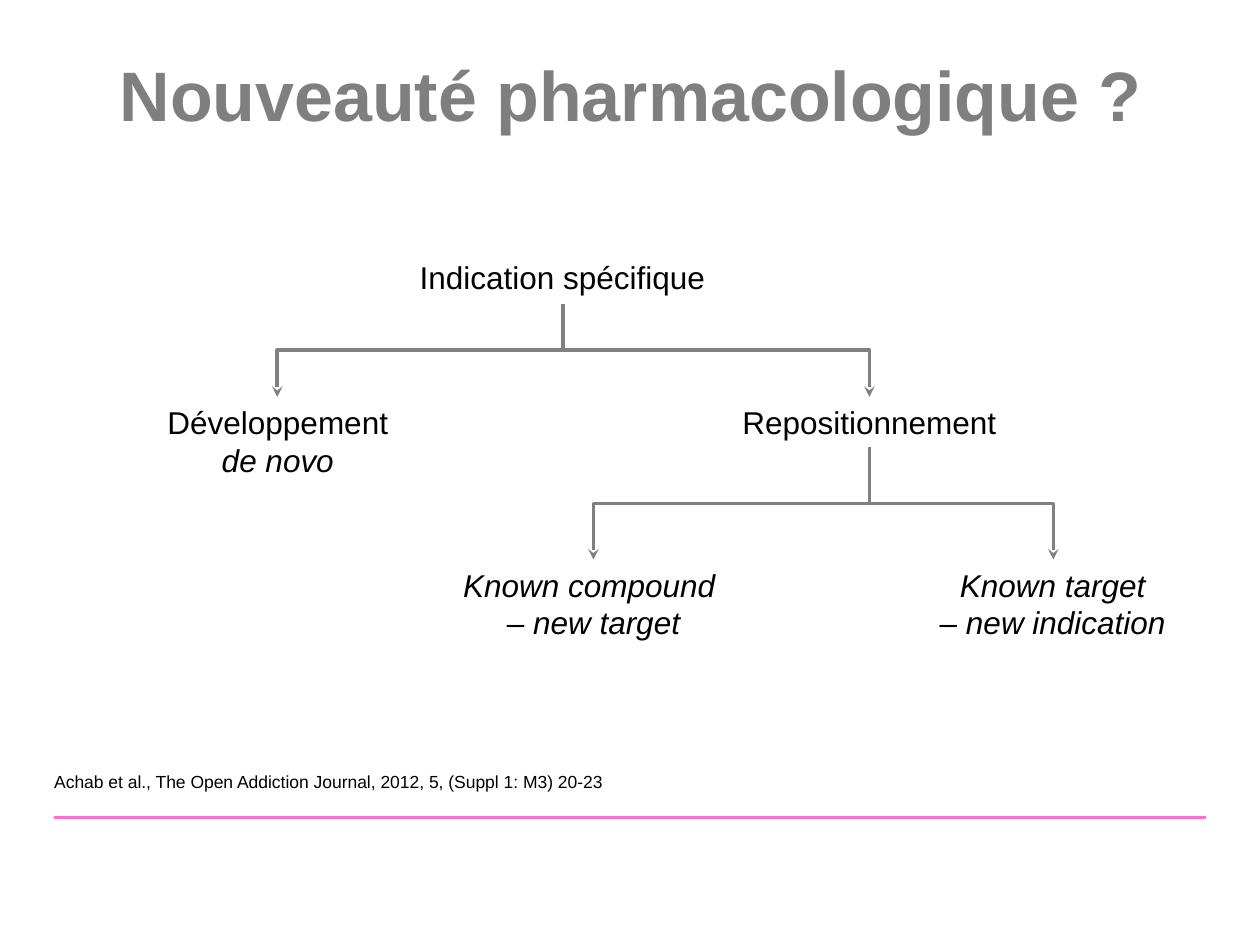
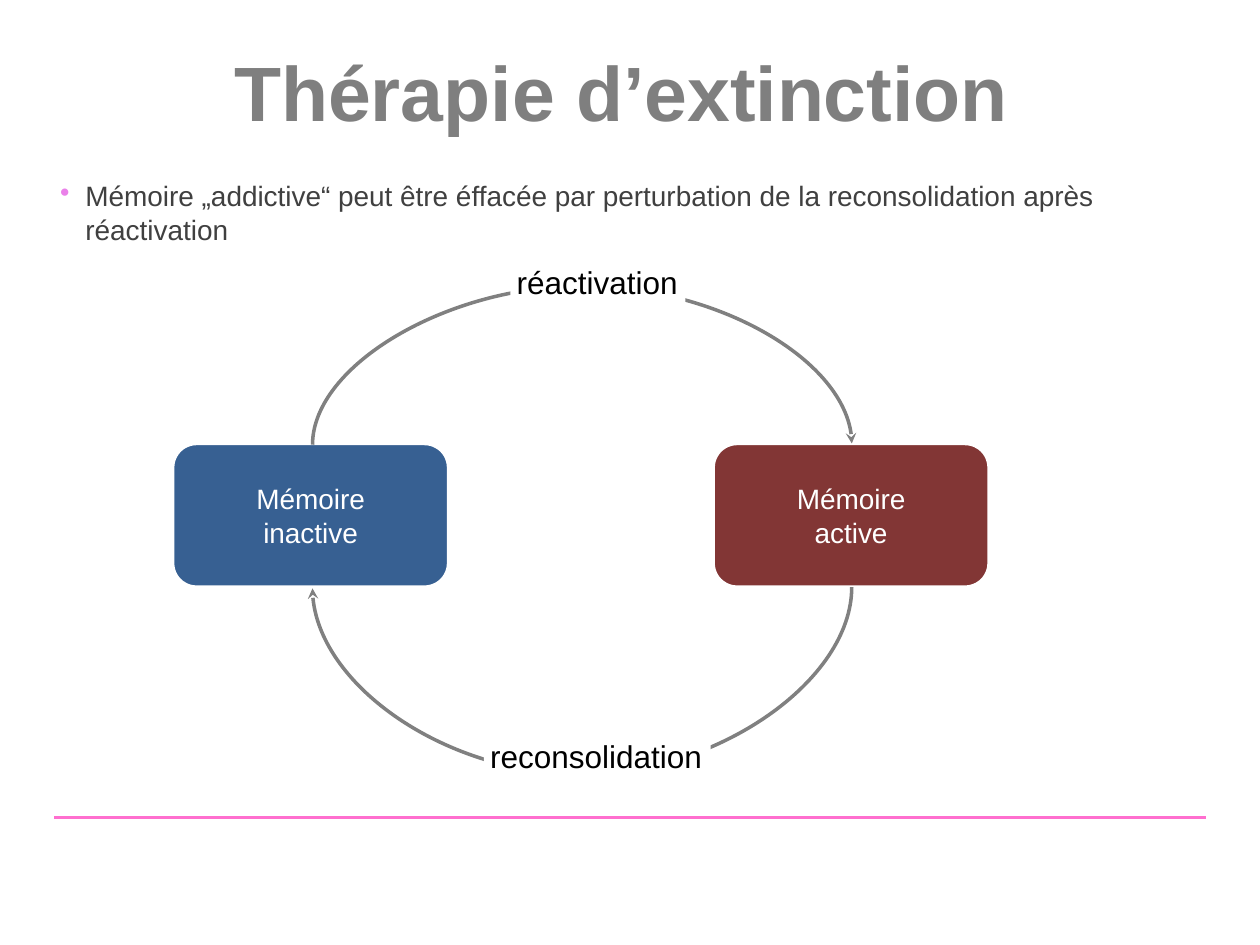
from pptx import Presentation
from pptx.dml.color import RGBColor
from pptx.enum.shapes import MSO_CONNECTOR, MSO_SHAPE
from pptx.enum.text import MSO_ANCHOR, PP_ALIGN
from pptx.oxml.ns import qn
from pptx.oxml.xmlchemy import OxmlElement
from pptx.util import Inches, Pt

FONT = "Arial"
TITLE_GREY = "7F7F7F"
ARROW_GREY = "808080"
BODY_GREY = "404040"
BLACK = "000000"
WHITE = "FFFFFF"
RULE_PINK = "FF6FCF"
BULLET_PINK = "EA81E9"
INACTIVE_BLUE = "376092"
ACTIVE_RED = "823635"


def rgb(hex_colour):
    return RGBColor.from_string(hex_colour)


def add_child(parent, tag, **attributes):
    child = OxmlElement(tag)
    for name, value in attributes.items():
        child.set(name, value)
    parent.append(child)
    return child


def write(frame, lines, size, colour, align=PP_ALIGN.CENTER, bold=False,
          italic_lines=(), inset=0.05):
    """Fill a text frame with one paragraph per line."""
    frame.margin_left = frame.margin_right = Inches(inset)
    frame.margin_top = frame.margin_bottom = Inches(0.05)
    for index, line in enumerate(lines):
        paragraph = frame.add_paragraph() if index else frame.paragraphs[0]
        paragraph.text = line
        paragraph.alignment = align
        font = paragraph.font
        font.name, font.size, font.bold = FONT, Pt(size), bold
        font.italic = index in italic_lines
        font.color.rgb = rgb(colour)


def add_title(slide, text, box, size):
    title = slide.shapes.add_textbox(*map(Inches, box))
    title.text_frame.word_wrap = True
    title.text_frame.vertical_anchor = MSO_ANCHOR.MIDDLE
    write(title.text_frame, [text], size, TITLE_GREY, bold=True, inset=0.1)


def add_label(slide, lines, box, size=18, align=PP_ALIGN.CENTER,
              italic_lines=(), fill=None):
    label = slide.shapes.add_textbox(*map(Inches, box))
    label.text_frame.word_wrap = False
    if fill:
        label.fill.solid()
        label.fill.fore_color.rgb = rgb(fill)
    write(label.text_frame, lines, size, BLACK, align, italic_lines=italic_lines)


def add_bullet(slide, text, box):
    body = slide.shapes.add_textbox(*map(Inches, box))
    body.text_frame.word_wrap = True
    properties = body.text_frame.paragraphs[0]._p.get_or_add_pPr()
    properties.set("marL", str(Inches(0.2)))
    properties.set("indent", str(Inches(-0.2)))
    add_child(add_child(properties, "a:buClr"), "a:srgbClr", val=BULLET_PINK)
    add_child(properties, "a:buChar", char="•")
    write(body.text_frame, [text], 16, BODY_GREY, PP_ALIGN.LEFT, inset=0.1)


def add_memory_state(slide, state, left, colour):
    box = slide.shapes.add_shape(MSO_SHAPE.ROUNDED_RECTANGLE, Inches(left),
                                 Inches(3.52), Inches(2.19), Inches(1.14))
    box.shadow.inherit = False
    box.fill.solid()
    box.fill.fore_color.rgb = rgb(colour)
    box.line.color.rgb = rgb(WHITE)
    box.line.width = Pt(2)
    box.text_frame.vertical_anchor = MSO_ANCHOR.MIDDLE
    write(box.text_frame, ["Mémoire", state], 16, WHITE)


def add_line(slide, kind, start, end, colour):
    line = slide.shapes.add_connector(kind, *map(Inches, (*start, *end)))
    line.line.color.rgb = rgb(colour)
    line.line.width = Pt(2)
    add_child(line._element.spPr, "a:effectLst")
    return line


def add_arrow(slide, kind, start, end, bend_y):
    """Join two points by an arrow that leaves vertically and crosses at bend_y.

    Connectors leave sideways, so the ends are laid out a quarter turn back
    around the middle and the whole connector is then rotated.
    """
    (x1, y1), (x2, y2) = start, end
    middle_x, middle_y = (x1 + x2) / 2, (y1 + y2) / 2
    turn = -1 if x2 > x1 and y2 > y1 else 1

    def turned_back(x, y):
        return middle_x + turn * (y - middle_y), middle_y - turn * (x - middle_x)

    arrow = add_line(slide, kind, turned_back(*start), turned_back(*end), ARROW_GREY)
    properties = arrow._element.spPr
    degrees = 90 if turn > 0 else 270
    properties.find(qn("a:xfrm")).set("rot", str(degrees * 60000))
    geometry = properties.find(qn("a:prstGeom"))
    for old_guides in geometry.findall(qn("a:avLst")):
        geometry.remove(old_guides)
    bend = round((bend_y - y1) / (y2 - y1) * 100000)
    add_child(add_child(geometry, "a:avLst"), "a:gd", name="adj1", fmla=f"val {bend}")
    add_child(properties.find(qn("a:ln")), "a:tailEnd", type="stealth")


def add_fork(slide, stem, branch_xs, branch_y):
    """Draw elbow arrows from one stem down to several branches."""
    for x in branch_xs:
        add_arrow(slide, MSO_CONNECTOR.ELBOW, stem, (x, branch_y),
                  (stem[1] + branch_y) / 2)


def add_ruled_slide(deck):
    slide = deck.slides.add_slide(deck.slide_layouts[6])
    add_line(slide, MSO_CONNECTOR.STRAIGHT, (0.43, 6.49), (9.57, 6.49), RULE_PINK)
    return slide


def build_indication_tree(deck):
    slide = add_ruled_slide(deck)
    add_title(slide, "Nouveauté pharmacologique ?", (0.49, 0.36, 9.03, 0.77), 40)
    add_label(slide, ["Indication spécifique"], (3.28, 2, 2.39, 0.4),
              align=PP_ALIGN.LEFT)
    add_label(slide, ["Développement", "de novo"], (1.27, 3.15, 1.87, 0.71),
              italic_lines=(1,))
    add_label(slide, ["Repositionnement"], (5.81, 3.15, 2.18, 0.4))
    add_label(slide, ["Known compound ", "– new target"], (3.62, 4.44, 2.18, 0.71),
              italic_lines=(0, 1))
    add_label(slide, ["Known target", "– new indication"], (7.37, 4.44, 1.97, 0.71),
              italic_lines=(0, 1))
    add_label(slide,
              ["Achab et al., The Open Addiction Journal, 2012, 5, (Suppl 1: M3) 20-23"],
              (0.38, 6.07, 4.52, 0.44), size=10, align=PP_ALIGN.LEFT)
    add_fork(slide, (4.47, 2.41), (2.2, 6.9), 3.15)
    add_fork(slide, (6.9, 3.55), (4.71, 8.36), 4.44)


def build_memory_cycle(deck):
    slide = add_ruled_slide(deck)
    add_title(slide, "Thérapie d’extinction", (0.9, 0.3, 8.07, 0.84), 44)
    add_bullet(slide, "Mémoire „addictive“ peut être éffacée par perturbation de la "
               "reconsolidation après réactivation", (0.38, 1.37, 9, 0.86))
    add_memory_state(slide, "inactive", 1.37, INACTIVE_BLUE)
    add_memory_state(slide, "active", 5.66, ACTIVE_RED)
    inactive_x, active_x = 2.48, 6.76
    add_arrow(slide, MSO_CONNECTOR.CURVE, (inactive_x, 3.53), (active_x, 3.52), 2.25)
    add_label(slide, ["réactivation"], (4.05, 2.04, 1.39, 0.4),
              align=PP_ALIGN.LEFT, fill=WHITE)
    add_arrow(slide, MSO_CONNECTOR.CURVE, (active_x, 4.66), (inactive_x, 4.67), 6.17)
    add_label(slide, ["reconsolidation"], (3.84, 5.8, 1.8, 0.4),
              align=PP_ALIGN.LEFT, fill=WHITE)


def main():
    deck = Presentation()
    deck.slide_width, deck.slide_height = Inches(10), Inches(7.5)
    build_indication_tree(deck)
    build_memory_cycle(deck)
    deck.save("out.pptx")


if __name__ == "__main__":
    main()
